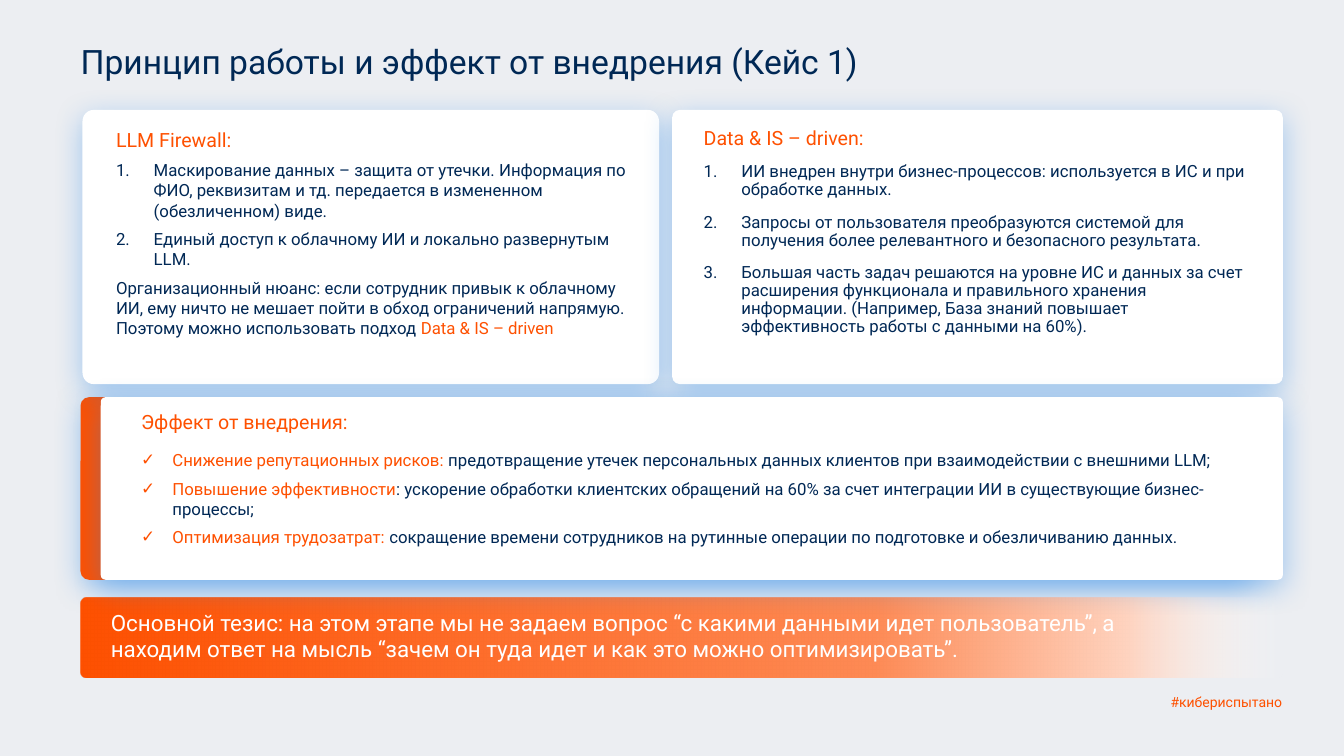
import pptx
import pptx.dml.color
import pptx.enum.shapes
import pptx.enum.text
import pptx.oxml
import pptx.oxml.ns
import pptx.util

Cm, Pt = pptx.util.Cm, pptx.util.Pt
ALIGN = pptx.enum.text.PP_ALIGN
NAMESPACE = pptx.oxml.ns.nsdecls("a")

ORANGE, NAVY, WHITE = "FE5000", "002855", "FFFFFF"
BACKGROUND, SHADOW = "ECEEF2", "2B8AEA"
HEADING, BODY = 14, 12


def rgb(value):
    return pptx.dml.color.RGBColor.from_string(value)


def color_xml(value, alpha=100):
    return (f'<a:srgbClr {NAMESPACE} val="{rgb(value)}">'
            f'<a:alpha val="{alpha * 1000}"/></a:srgbClr>')


def add_run(paragraph, text, *, size=BODY, color=NAVY, font="Roboto"):
    run = paragraph.add_run()
    run.text = text
    run.font.name = font
    run.font.size = Pt(size)
    run.font.bold = False
    run.font.color.rgb = rgb(color)


def para(*runs, size=BODY, color=NAVY, bullet=None, before=0, after=0,
         spacing=1.0, align=ALIGN.LEFT):
    """Describe a paragraph; a run is a text or a (text, colour) pair."""
    return {"runs": [(run, color) if isinstance(run, str) else run for run in runs],
            "size": size, "bullet": bullet, "before": before, "after": after,
            "spacing": spacing, "align": align}


class SlideBuilder:
    BULLETS = {
        None: (0, ["<a:buNone {0}/>"]),
        "number": (0.95, ['<a:buFont {0} typeface="+mj-lt"/>',
                          '<a:buAutoNum {0} type="arabicPeriod"/>']),
        "check": (0.79, [f'<a:buClr {{0}}><a:srgbClr val="{ORANGE}"/></a:buClr>',
                         '<a:buFont {0} typeface="Roboto"/>',
                         '<a:buChar {0} char="✓"/>']),
    }

    def __init__(self, slide):
        self.slide = slide
        slide.background.fill.solid()
        slide.background.fill.fore_color.rgb = rgb(BACKGROUND)

    def panel(self, left, top, width, height, radius, color, shadow=True):
        shape = self.slide.shapes.add_shape(
            pptx.enum.shapes.MSO_SHAPE.ROUNDED_RECTANGLE,
            Cm(left), Cm(top), Cm(width), Cm(height))
        shape.adjustments[0] = radius
        shape.fill.solid()
        shape.fill.fore_color.rgb = rgb(color)
        shape.line.fill.background()
        shape.shadow.inherit = False
        if shadow:
            effects = shape._element.spPr.find(pptx.oxml.ns.qn("a:effectLst"))
            effects.append(pptx.oxml.parse_xml(
                f'<a:outerShdw {NAMESPACE} blurRad="{Pt(21.3)}" dist="{Pt(5.2)}" '
                f'dir="5400000" algn="t" rotWithShape="0">'
                f'{color_xml(SHADOW, 40)}</a:outerShdw>'))
        return shape

    def gradient(self, shape, stops):
        shape.fill.gradient()
        shape.fill.gradient_angle = 0
        stop_list = next(shape._element.spPr.iter(pptx.oxml.ns.qn("a:gsLst")))
        for stop in list(stop_list):
            stop_list.remove(stop)
        for position, color, alpha in stops:
            stop_list.append(pptx.oxml.parse_xml(
                f'<a:gs {NAMESPACE} pos="{position * 1000}">'
                f'{color_xml(color, alpha)}</a:gs>'))

    def placeholder(self, index, box, paragraphs):
        holder = self.slide.placeholders[index]
        holder.left, holder.top, holder.width, holder.height = map(Cm, box)
        # Text belongs in front of the panels
        self.slide.shapes._spTree.append(holder._element)
        self.set_text(holder.text_frame, paragraphs)

    def textbox(self, box, paragraphs):
        self.set_text(self.slide.shapes.add_textbox(*map(Cm, box)).text_frame, paragraphs)

    def set_text(self, frame, paragraphs):
        frame.word_wrap = True
        frame.auto_size = pptx.enum.text.MSO_AUTO_SIZE.NONE
        frame.vertical_anchor = pptx.enum.text.MSO_ANCHOR.TOP
        for number, content in enumerate(paragraphs):
            paragraph = frame.add_paragraph() if number else frame.paragraphs[0]
            indent, bullet_parts = self.BULLETS[content["bullet"]]
            properties = paragraph._p.get_or_add_pPr()
            properties.set("marL", str(Cm(indent)))
            properties.set("indent", str(-Cm(indent)))
            for part in bullet_parts:
                properties.append(pptx.oxml.parse_xml(part.format(NAMESPACE)))
            paragraph.alignment = content["align"]
            paragraph.line_spacing = content["spacing"]
            paragraph.space_before = Pt(content["before"])
            paragraph.space_after = Pt(content["after"])
            for text, color in content["runs"]:
                add_run(paragraph, text, size=content["size"], color=color)


def main():
    deck = pptx.Presentation()
    deck.slide_width, deck.slide_height = Cm(33.87), Cm(19.05)
    comparison_layout = deck.slide_layouts[4]
    page = SlideBuilder(deck.slides.add_slide(comparison_layout))

    # Panels, from back to front
    page.panel(2.03, 10.01, 29.51, 4.6, 0.046, ORANGE)
    thesis_bar = page.panel(2.03, 15.06, 30.3, 2.01, 0.076, ORANGE, shadow=False)
    page.gradient(thesis_bar, [(0, ORANGE, 100), (66, "FE8A55", 100),
                               (87, "FFD3BF", 100), (100, WHITE, 0)])
    page.panel(2.08, 2.77, 14.53, 6.91, 0.041, WHITE)
    page.panel(16.94, 2.77, 15.39, 6.91, 0.028, WHITE)
    page.panel(2.54, 10.01, 29.79, 4.6, 0.026, WHITE)

    # Title and hashtag
    page.placeholder(0, (1.78, 1.02, 26.29, 1.68), [
        para("Принцип работы и эффект от внедрения (Кейс 1)", size=24, spacing=0.9)])
    page.textbox((26.31, 17.35, 6.25, 0.69), [
        para("#кибериспытано", size=10, color=ORANGE, align=ALIGN.RIGHT)])

    # LLM Firewall card
    firewall_steps = [
        "Маскирование данных – защита от утечки. Информация по ФИО, реквизитам и тд. "
        "передается в измененном (обезличенном) виде.",
        "Единый доступ к облачному ИИ и локально развернутым LLM.",
    ]
    page.placeholder(2, (2.67, 3.1, 13.39, 6.3), [
        para("LLM Firewall:", size=HEADING, color=ORANGE),
        *[para(step, bullet="number", before=6) for step in firewall_steps],
        para("Организационный нюанс: если сотрудник привык к облачному ИИ, "
             "ему ничто не мешает пойти в обход ограничений напрямую.", before=6),
        para("Поэтому можно использовать подход ", ("Data & IS – driven", ORANGE)),
    ])

    # Data & IS card
    driven_steps = [
        "ИИ внедрен внутри бизнес-процессов: используется в ИС и при обработке данных.",
        "Запросы от пользователя преобразуются системой для получения более "
        "релевантного и безопасного результата.",
        "Большая часть задач решаются на уровне ИС и данных за счет расширения "
        "функционала и правильного хранения информации. (Например, База знаний "
        "повышает эффективность работы с данными на 60%).",
    ]
    page.placeholder(4, (17.48, 3.1, 14.3, 6.02), [
        para("Data & IS – driven:", size=HEADING, color=ORANGE, spacing=0.9),
        *[para(step, bullet="number", before=10, spacing=0.9) for step in driven_steps],
    ])

    # Main thesis
    page.placeholder(3, (2.54, 15.21, 27.25, 1.63), [
        para("Основной тезис: на этом этапе мы не задаем вопрос “с какими данными идет "
             "пользователь”, а находим ответ на мысль “зачем он туда идет и как это "
             "можно оптимизировать”.", size=16, color=WHITE)])

    # Effects of the rollout
    effects = [
        ("Снижение репутационных рисков: ",
         "предотвращение утечек персональных данных клиентов при взаимодействии "
         "с внешними LLM;"),
        ("Повышение эффективности",
         ": ускорение обработки клиентских обращений на 60% за счет интеграции ИИ "
         "в существующие бизнес-процессы;"),
        ("Оптимизация трудозатрат: ",
         "сокращение времени сотрудников на рутинные операции по подготовке "
         "и обезличиванию данных."),
    ]
    page.placeholder(1, (3.3, 10.19, 28.65, 4.27), [
        para("Эффект от внедрения:", size=HEADING, color=ORANGE, after=6),
        *[para((benefit, ORANGE), detail, bullet="check", before=6)
          for benefit, detail in effects],
    ])

    deck.save("out.pptx")


if __name__ == "__main__":
    main()
